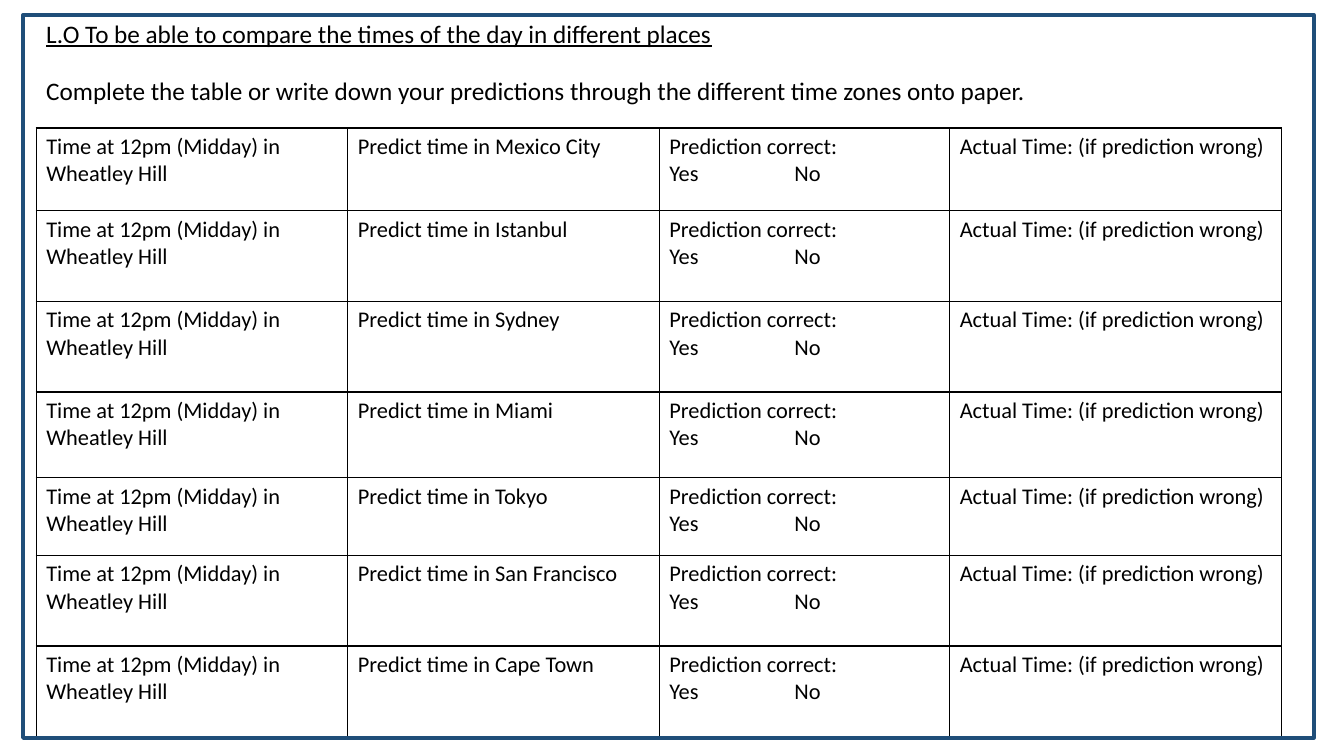
import pptx
import pptx.dml.color
import pptx.enum.shapes
import pptx.oxml
import pptx.oxml.ns
import pptx.util

Inches = pptx.util.Inches
Pt = pptx.util.Pt

COLOURS = {"text": "000000", "grid": "000000", "frame": "1F4E79"}
CITIES = ["Mexico City", "Istanbul", "Sydney", "Miami", "Tokyo", "San Francisco", "Cape Town"]
COLUMN_WIDTHS = [3.09, 3.09, 2.88, 3.29]
ROW_HEIGHTS = [0.82, 0.9, 0.9, 0.85, 0.77, 0.9, 0.9]
NO_TAB = 1.24  # distance from "Yes" to "No"
NAMESPACE = pptx.oxml.ns.nsdecls("a")


class Worksheet:
    """Holds the style and the current slide."""

    font = "Calibri"

    def __init__(self, slide):
        self.slide = slide

    def colour(self, name):
        return pptx.dml.color.RGBColor.from_string(COLOURS[name])

    def run(self, paragraph, text, size, underline=None):
        run = paragraph.add_run()
        run.text = text
        run.font.name = self.font
        run.font.size = Pt(size)
        run.font.underline = underline
        run.font.color.rgb = self.colour("text")

    def text(self, left, top, width, height, text, underline=None):
        shape = self.slide.shapes.add_textbox(
            Inches(left), Inches(top), Inches(width), Inches(height))
        shape.text_frame.word_wrap = True
        self.run(shape.text_frame.paragraphs[0], text, 18, underline)

    def cell(self, cell, lines):
        cell.fill.background()
        for index, line in enumerate(lines):
            frame = cell.text_frame
            paragraph = frame.add_paragraph() if index else frame.paragraphs[0]
            self.run(paragraph, line, 16)
            if "\t" in line:
                paragraph._p.get_or_add_pPr().append(pptx.oxml.parse_xml(
                    f'<a:tabLst {NAMESPACE}><a:tab pos="{Inches(NO_TAB)}" algn="l"/></a:tabLst>'))
        # Borders come before the fill in the cell properties
        properties = cell._tc.get_or_add_tcPr()
        for position, side in enumerate(("lnL", "lnR", "lnT", "lnB")):
            properties.insert(position, pptx.oxml.parse_xml(
                f'<a:{side} {NAMESPACE} w="{Pt(1)}"><a:solidFill>'
                f'<a:srgbClr val="{COLOURS["grid"]}"/></a:solidFill></a:{side}>'))

    def table(self, left, top, widths, heights, rows):
        table = self.slide.shapes.add_table(
            len(heights), len(widths), Inches(left), Inches(top),
            Inches(sum(widths)), Inches(sum(heights))).table
        table.first_row = False
        table.horz_banding = False
        for column, width in zip(table.columns, widths):
            column.width = Inches(width)
        for row, height, contents in zip(table.rows, heights, rows):
            row.height = Inches(height)
            for cell, lines in zip(row.cells, contents):
                self.cell(cell, lines)

    def frame(self, left, top, width, height):
        shape = self.slide.shapes.add_shape(
            pptx.enum.shapes.MSO_SHAPE.RECTANGLE,
            Inches(left), Inches(top), Inches(width), Inches(height))
        shape.shadow.inherit = False
        shape.fill.background()
        shape.line.color.rgb = self.colour("frame")
        shape.line.width = Pt(3)


def main():
    presentation = pptx.Presentation()
    presentation.slide_width = Inches(13.33)
    presentation.slide_height = Inches(7.5)
    worksheet = Worksheet(presentation.slides.add_slide(presentation.slide_layouts[6]))

    # Learning objective
    worksheet.text(0.36, 0.13, 8.98, 0.4,
                   "L.O To be able to compare the times of the day in different places",
                   underline=True)

    # Prediction table, one row for each city
    rows = [[["Time at 12pm (Midday) in Wheatley Hill"],
             [f"Predict time in {city}"],
             ["Prediction correct:", "Yes\tNo"],
             ["Actual Time: (if prediction wrong)"]] for city in CITIES]
    worksheet.table(0.36, 1.27, COLUMN_WIDTHS, ROW_HEIGHTS, rows)

    # Instruction
    worksheet.text(0.36, 0.7, 10.71, 0.4,
                   "Complete the table or write down your predictions "
                   "through the different time zones onto paper.")

    # Frame around the page
    worksheet.frame(0.23, 0.15, 12.8, 7.17)

    presentation.save("out.pptx")


if __name__ == "__main__":
    main()
